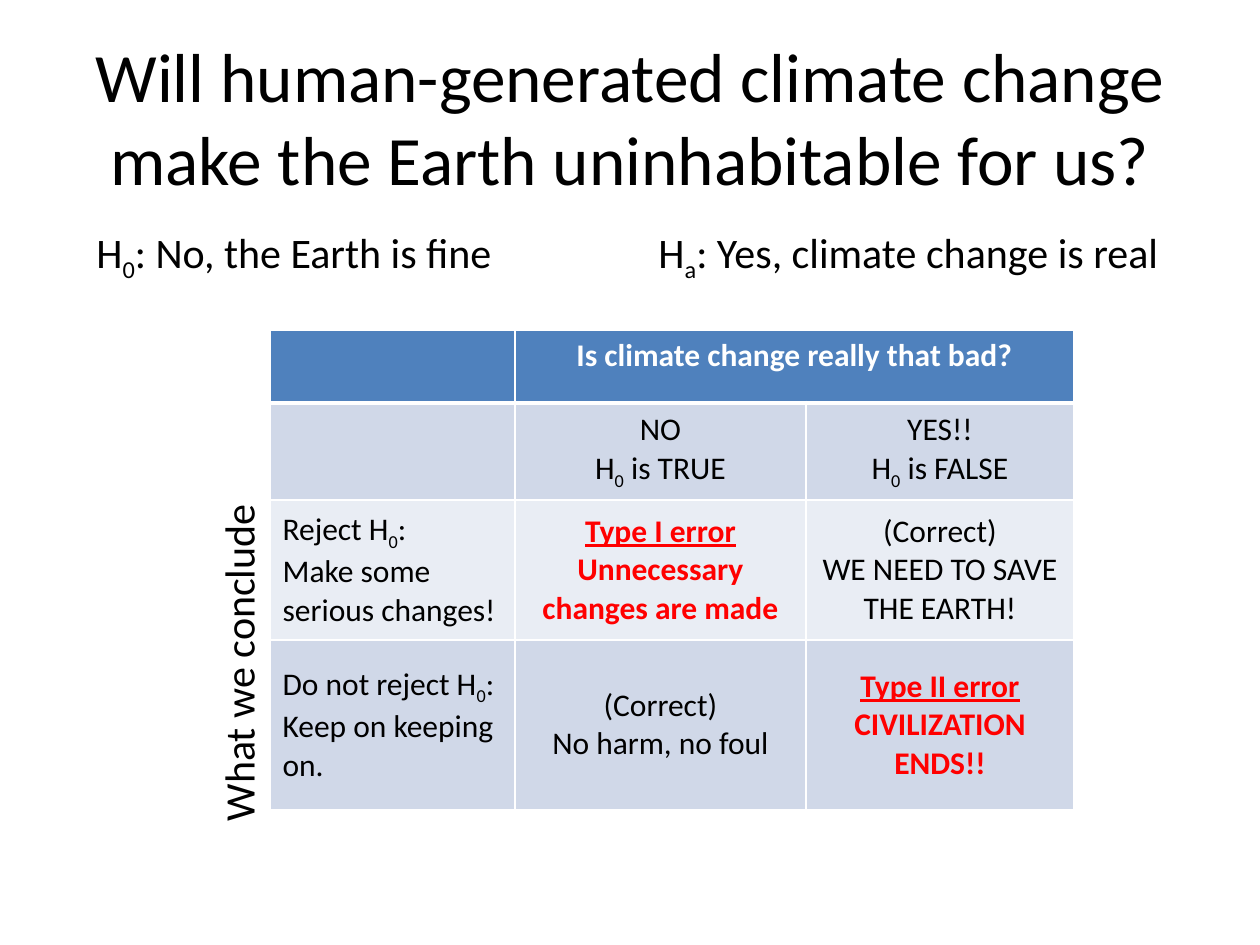
from lxml import etree
from pptx import Presentation
from pptx.dml.color import RGBColor
from pptx.enum.text import MSO_ANCHOR, MSO_AUTO_SIZE, PP_ALIGN
from pptx.oxml.ns import qn
from pptx.util import Emu, Pt

LEFT, CENTER = PP_ALIGN.LEFT, PP_ALIGN.CENTER
TOP, MIDDLE = MSO_ANCHOR.TOP, MSO_ANCHOR.MIDDLE
NO_FIT = MSO_AUTO_SIZE.NONE
FONT = "Calibri"
BLACK, WHITE, RED = "000000", "FFFFFF", "FF0000"
HEADER, BAND_DARK, BAND_LIGHT = "4F81BD", "D0D8E8", "E9EDF4"

# Content: "_" makes the next character a subscript
TITLE = "Will human-generated climate change make the Earth uninhabitable for us?"
LABELS = [  # text, left, top, width, height, rotation
    ("H_0: No, the Earth is fine", 84, 220, 447, 63, 0),
    ("H_a: Yes, climate change is real", 646, 220, 536, 63, 0),
    ("What we conclude", 66, 630, 344, 63, 270),
]
TABLE_LEFT, TABLE_TOP = 270, 330
COL_WIDTHS = [245, 291, 268]
ROWS = [  # height, fill, cells as lists of paragraphs
    (73, HEADER, [[], ["Is climate change really that bad?"], []]),
    (97, BAND_DARK, [[], ["NO", "H_0 is TRUE"], ["YES!!", "H_0 is FALSE"]]),
    (140, BAND_LIGHT, [["Reject H_0:", "Make some serious changes!"],
                       ["Type I error", "Unnecessary changes are made"],
                       ["(Correct)", "WE NEED TO SAVE THE EARTH!"]]),
    (170, BAND_DARK, [["Do not reject H_0:", "Keep on keeping on."],
                      ["(Correct)", "No harm, no foul"],
                      ["Type II error", "CIVILIZATION ENDS!!"]]),
]


def px(n):
    return Emu(round(n * 914400 / 126))


def rgb(value):
    return RGBColor.from_string(value)


def write(p, text, size, color=BLACK, bold=False, align=LEFT):
    p.alignment = align
    p.font.name, p.font.size, p.font.bold = FONT, Pt(size), bold
    p.font.color.rgb = rgb(color)
    head, *rest = text.split("_")
    p.add_run().text = head
    for part in rest:
        sub = p.add_run()
        sub.text = part[0]
        sub.font._element.set("baseline", "-25000")
        p.add_run().text = part[1:]


def set_borders(cell, bottom):
    tcPr = cell._tc.get_or_add_tcPr()
    for side, width in (("L", 1), ("R", 1), ("T", 1), ("B", bottom)):
        ln = etree.SubElement(tcPr, qn(f"a:ln{side}"), w=str(Pt(width)))
        fill = etree.SubElement(ln, qn("a:solidFill"))
        etree.SubElement(fill, qn("a:srgbClr"), val=WHITE)


prs = Presentation()
prs.slide_width, prs.slide_height = px(1260), px(945)
s = prs.slides.add_slide(prs.slide_layouts[5])

# Title
title = s.shapes.title
title.left, title.top, title.width, title.height = map(px, (63, 38, 1134, 157))
tf = title.text_frame
tf.auto_size, tf.vertical_anchor = NO_FIT, MIDDLE
write(tf.paragraphs[0], TITLE, 39.6, align=CENTER)

# Hypotheses and the row-axis label
for text, *box, rotation in LABELS:
    sp = s.shapes.add_textbox(*map(px, box))
    sp.rotation = rotation
    sp.text_frame.word_wrap = True
    write(sp.text_frame.paragraphs[0], text, 24)

# Decision table
heights = [row[0] for row in ROWS]
table = s.shapes.add_table(len(ROWS), len(COL_WIDTHS), px(TABLE_LEFT), px(TABLE_TOP),
                           px(sum(COL_WIDTHS)), px(sum(heights))).table
for column, width in zip(table.columns, COL_WIDTHS):
    column.width = px(width)
for i, (height, fill, cells) in enumerate(ROWS):
    table.rows[i].height = px(height)
    is_header = i == 0
    for j, lines in enumerate(cells):
        cell = table.cell(i, j)
        set_borders(cell, 3 if is_header else 1)
        cell.fill.solid()
        cell.fill.fore_color.rgb = rgb(fill)
        cell.vertical_anchor = TOP if is_header else MIDDLE
        is_error = bool(lines) and lines[0].endswith("error")
        color = WHITE if is_header else RED if is_error else BLACK
        tf = cell.text_frame
        for k, line in enumerate(lines):
            p = tf.add_paragraph() if k else tf.paragraphs[0]
            write(p, line, 18, color, is_header or is_error, CENTER if j else LEFT)
            if is_error and k == 0:
                p.runs[0].font.underline = True
table.cell(0, 1).merge(table.cell(0, 2))

prs.save("out.pptx")
